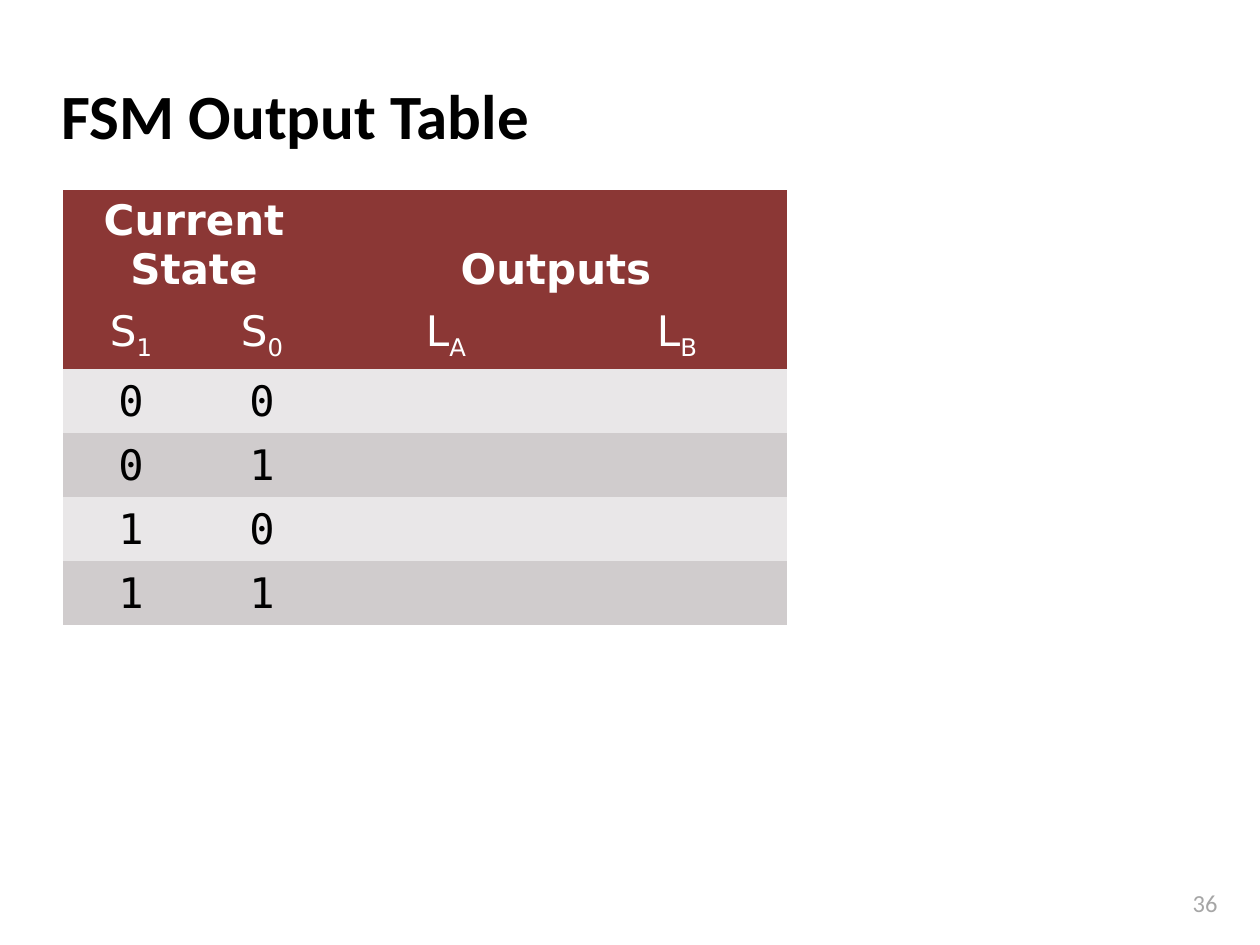
import pptx
import pptx.util
import pptx.dml.color
import pptx.enum.text
import pptx.oxml.ns

RED = pptx.dml.color.RGBColor(0x8B, 0x37, 0x35)
LIGHT = pptx.dml.color.RGBColor(0xE9, 0xE7, 0xE8)
DARK = pptx.dml.color.RGBColor(0xD0, 0xCC, 0xCD)
BLACK = pptx.dml.color.RGBColor(0x00, 0x00, 0x00)
WHITE = pptx.dml.color.RGBColor(0xFF, 0xFF, 0xFF)
GRAY = pptx.dml.color.RGBColor(0xA6, 0xA6, 0xA6)
ALIGN = pptx.enum.text.PP_ALIGN
ANCHOR = pptx.enum.text.MSO_ANCHOR
NO_STYLE_NO_GRID = "{2D5ABB26-0587-4C30-8999-92F81FD0307C}"


def px(length):
    return pptx.util.Emu(round(length * 914400 / 126))


def format_paragraph(paragraph, font_name, size, color, alignment, bold=False):
    paragraph.alignment = alignment
    paragraph.font.name = font_name
    paragraph.font.size = pptx.util.Pt(size)
    paragraph.font.color.rgb = color
    paragraph.font.bold = bold


presentation = pptx.Presentation()
presentation.slide_width = px(1260)
presentation.slide_height = px(945)
slide = presentation.slides.add_slide(presentation.slide_layouts[5])

title = slide.shapes.title
title.left, title.top, title.width, title.height = px(49), px(62), px(1046), px(105)
title.text_frame.text = "FSM Output Table"
title.text_frame.vertical_anchor = ANCHOR.MIDDLE
format_paragraph(title.text_frame.paragraphs[0], "Calibri", 36, BLACK, ALIGN.LEFT, True)

column_widths = [136, 126, 242, 220]
row_heights = [111, 68, 64, 64, 64, 64]
table = slide.shapes.add_table(
    len(row_heights), len(column_widths),
    px(63), px(190), px(sum(column_widths)), px(sum(row_heights)),
).table
table.first_row = False
table.horz_banding = False
table._tbl.tblPr.find(pptx.oxml.ns.qn("a:tableStyleId")).text = NO_STYLE_NO_GRID
for column, width in zip(table.columns, column_widths):
    column.width = px(width)
for row, height, fill in zip(table.rows, row_heights, [RED, RED, LIGHT, DARK, LIGHT, DARK]):
    row.height = px(height)
    for cell in row.cells:
        cell.fill.solid()
        cell.fill.fore_color.rgb = fill
        cell.vertical_anchor = ANCHOR.BOTTOM

for column_index, heading in [(0, "Current State"), (2, "Outputs")]:
    cell = table.cell(0, column_index)
    cell.merge(table.cell(0, column_index + 1))
    cell.text = heading
    format_paragraph(cell.text_frame.paragraphs[0], "DejaVu Sans", 24, WHITE, ALIGN.CENTER, True)

for column_index, (letter, subscript) in enumerate(["S1", "S0", "LA", "LB"]):
    paragraph = table.cell(1, column_index).text_frame.paragraphs[0]
    format_paragraph(paragraph, "DejaVu Sans", 24, WHITE, ALIGN.CENTER)
    paragraph.add_run().text = letter
    subscript_run = paragraph.add_run()
    subscript_run.text = subscript
    subscript_run.font._element.set("baseline", "-25000")

for row_index, state in enumerate(["00", "01", "10", "11"], start=2):
    for column_index, bit in enumerate(state):
        cell = table.cell(row_index, column_index)
        cell.text = bit
        format_paragraph(cell.text_frame.paragraphs[0], "DejaVu Sans Mono", 24, BLACK, ALIGN.CENTER)

number_box = slide.shapes.add_textbox(px(1134), px(882), px(96), px(43))
number_box.text_frame.word_wrap = True
number_box.text_frame.text = "36"
format_paragraph(number_box.text_frame.paragraphs[0], "Calibri", 14, GRAY, ALIGN.RIGHT)

presentation.save("out.pptx")
